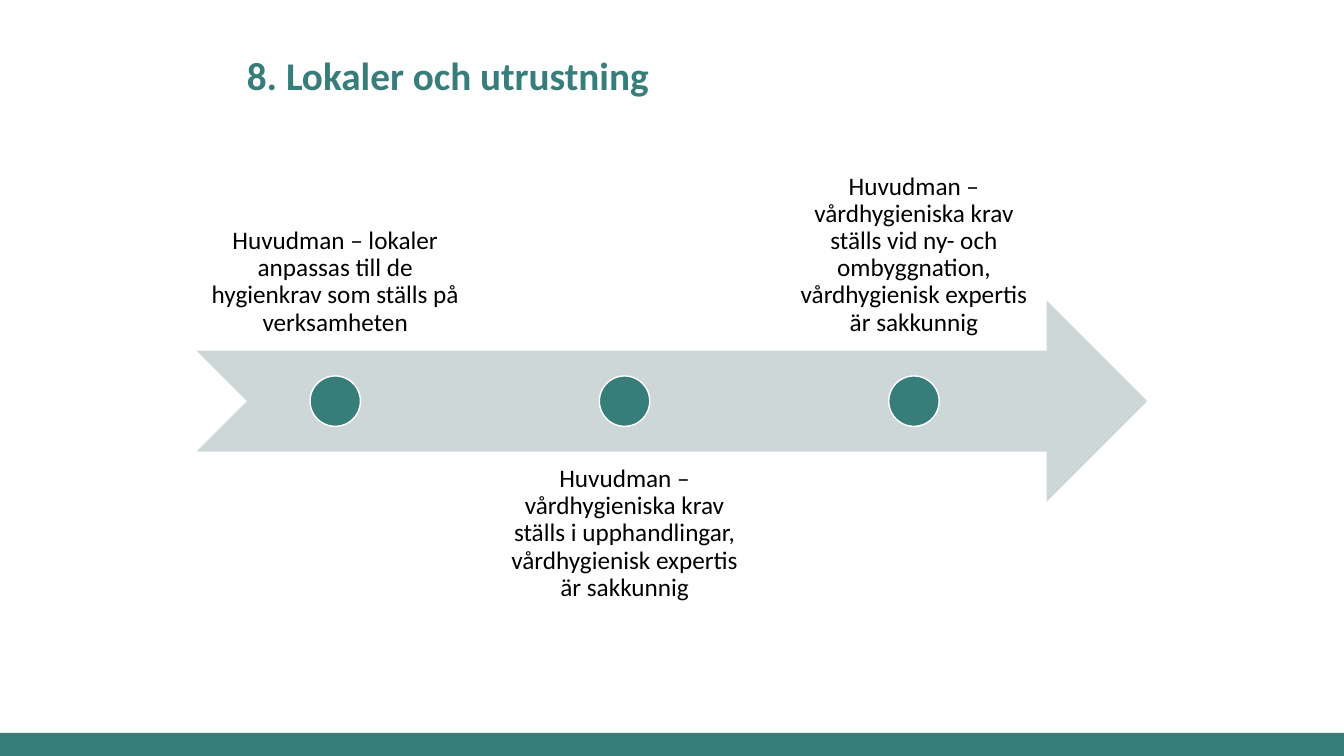
from dataclasses import dataclass

import pptx
import pptx.dml.color
import pptx.enum.shapes
import pptx.enum.text
import pptx.util

Inches = pptx.util.Inches
Pt = pptx.util.Pt
RGB = pptx.dml.color.RGBColor
SHAPE = pptx.enum.shapes.MSO_SHAPE
ANCHOR = pptx.enum.text.MSO_ANCHOR
ALIGN = pptx.enum.text.PP_ALIGN


@dataclass(frozen=True)
class Theme:
    font: str = "Calibri"
    teal: RGB = RGB(0x37, 0x7D, 0x7A)
    pale: RGB = RGB(0xCE, 0xD7, 0xD7)
    white: RGB = RGB(0xFF, 0xFF, 0xFF)
    black: RGB = RGB(0, 0, 0)
    title_size: float = 28
    step_size: float = 18


THEME = Theme()

STEPS = [
    "Huvudman – lokaler anpassas till de hygienkrav som ställs på verksamheten",
    "Huvudman – vårdhygieniska krav ställs i upphandlingar, "
    "vårdhygienisk expertis är sakkunnig",
    "Huvudman – vårdhygieniska krav ställs vid ny- och ombyggnation, "
    "vårdhygienisk expertis är sakkunnig",
]


def add_shape(slide, kind, box, fill, line=None):
    sp = slide.shapes.add_shape(kind, *map(Inches, box))
    sp.shadow.inherit = False
    sp.fill.solid()
    sp.fill.fore_color.rgb = fill
    if line is None:
        sp.line.fill.background()
    else:
        sp.line.color.rgb = line
        sp.line.width = Pt(1)


def add_text(slide, box, text, size, color=THEME.black, bold=False,
             anchor=ANCHOR.TOP, align=ALIGN.LEFT, inset=None):
    tf = slide.shapes.add_textbox(*map(Inches, box)).text_frame
    tf.word_wrap = True
    tf.vertical_anchor = anchor
    if inset is not None:
        tf.margin_left = tf.margin_right = Inches(inset)
        tf.margin_top = tf.margin_bottom = Inches(inset)
    tf.text = text
    p = tf.paragraphs[0]
    p.alignment = align
    p.line_spacing = 0.9
    r = p.runs[0]
    r.font.name = THEME.font
    r.font.size = Pt(size)
    r.font.bold = bold
    r.font.color.rgb = color


def add_timeline(slide):
    left, pitch, width, height, dot = 1.96, 2.87, 2.73, 2, 0.5
    middle = 3.98
    add_shape(slide, SHAPE.NOTCHED_RIGHT_ARROW,
              (1.95, middle - 1, 9.43, 2), THEME.pale)
    for i, step in enumerate(STEPS):
        x = left + i * pitch
        above = i % 2 == 0
        y = middle - 0.5 - height if above else middle + 0.5
        add_text(slide, (x, y, width, height), step, THEME.step_size,
                 anchor=ANCHOR.BOTTOM if above else ANCHOR.TOP,
                 align=ALIGN.CENTER, inset=0.14)
        add_shape(slide, SHAPE.OVAL,
                  (x + (width - dot) / 2, middle - dot / 2, dot, dot),
                  THEME.teal, THEME.white)


def main():
    prs = pptx.Presentation()
    prs.slide_width = Inches(13.33)
    prs.slide_height = Inches(7.5)
    slide = prs.slides.add_slide(prs.slide_layouts[6])
    add_shape(slide, SHAPE.RECTANGLE, (0, 7.27, 13.33, 0.23), THEME.teal)
    add_text(slide, (2.35, 0.4, 7.72, 0.74), "8. Lokaler och utrustning",
             THEME.title_size, THEME.teal, bold=True, anchor=ANCHOR.MIDDLE)
    add_timeline(slide)
    prs.save("out.pptx")


if __name__ == "__main__":
    main()
